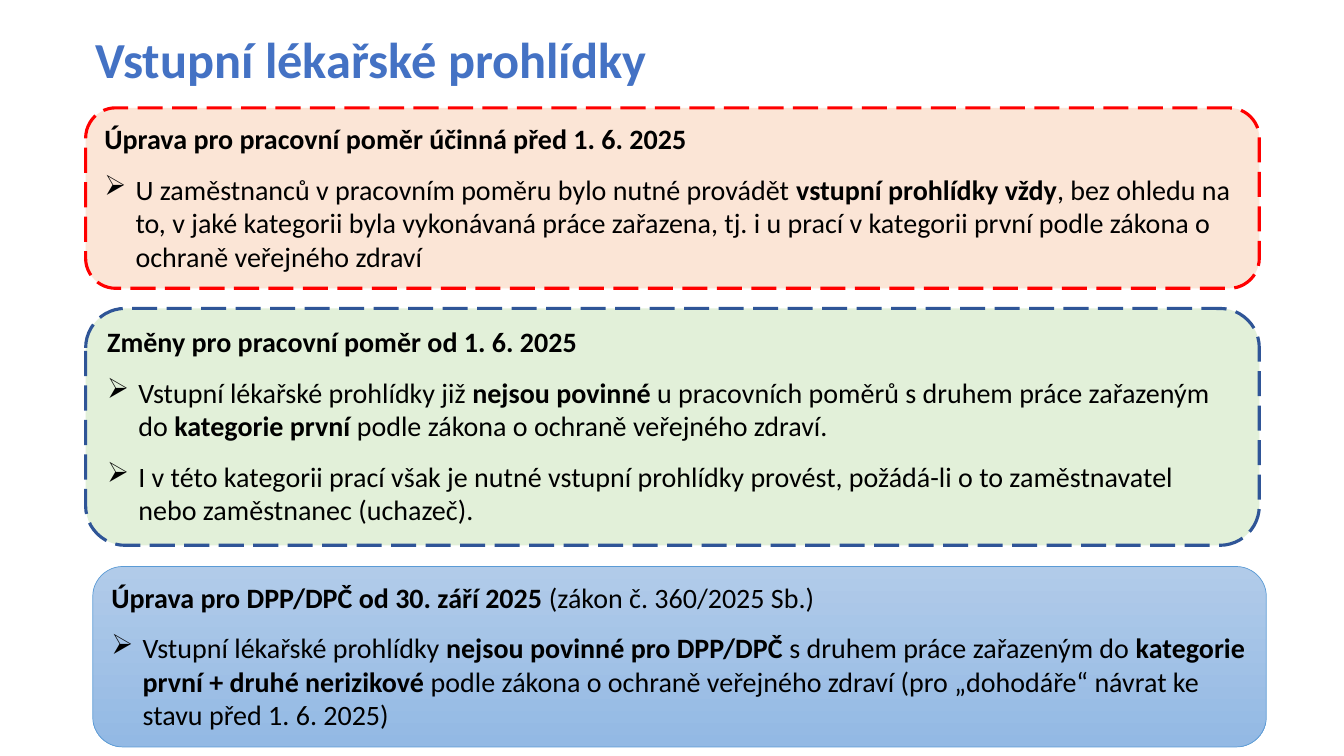
import dataclasses

import pptx
import pptx.dml.color
import pptx.enum.dml
import pptx.enum.shapes
import pptx.enum.text
import pptx.oxml.xmlchemy
import pptx.util
from lxml import etree
from pptx.oxml import ns
from pptx.util import Inches, Pt


@dataclasses.dataclass(frozen=True)
class Theme:
    """Colours, font and type sizes of the slide."""
    font: str = "Calibri"
    title_size: int = 36
    body_size: int = 20
    title: str = "4472C4"
    text: str = "000000"
    before: tuple = (("FBE5D6",), "FF0000")
    change: tuple = (("E2F0D9",), "2F5597")
    agreements: tuple = (("B1CBE9", "93B9E4"), "5B9BD5")


THEME = Theme()


def rgb(value):
    """Turn a hex string into a colour."""
    return pptx.dml.color.RGBColor.from_string(value)


def add_run(p, text, size, color, bold):
    """Add one formatted run to a paragraph."""
    r = p.add_run()
    r.text = text
    r.font.name = THEME.font
    r.font.size = Pt(size)
    r.font.bold = bold
    r.font.color.rgb = rgb(color)


def add_marked_text(p, text):
    """Add runs to a paragraph, bold between asterisks."""
    for i, part in enumerate(text.split("*")):
        if part:
            add_run(p, part, THEME.body_size, THEME.text, i % 2 == 1)


def add_bullet(p):
    """Give a paragraph an arrow bullet with a hanging indent."""
    pPr = p._p.get_or_add_pPr()
    pPr.set("marL", str(Inches(0.31)))
    pPr.set("indent", str(-Inches(0.31)))
    etree.SubElement(pPr, ns.qn("a:buChar")).set("char", "➢")


def add_title(slide, text):
    """Add the slide title."""
    sp = slide.shapes.add_textbox(Inches(0.85), Inches(0.27), Inches(11.11), Inches(0.7))
    tf = sp.text_frame
    tf.word_wrap = True
    tf.vertical_anchor = pptx.enum.text.MSO_ANCHOR.MIDDLE
    p = tf.paragraphs[0]
    p.line_spacing = 0.9
    add_run(p, text, THEME.title_size, THEME.title, True)


def fill_panel(sp, fills):
    """Fill a panel with one colour or a vertical gradient of two."""
    if len(fills) == 1:
        sp.fill.solid()
        sp.fill.fore_color.rgb = rgb(fills[0])
        return
    sp.fill.gradient()
    sp.fill.gradient_angle = 270
    for stop, color in zip(sp.fill.gradient_stops, fills):
        stop.color.rgb = rgb(color)


def add_panel(slide, left, top, height, style, heading, points, dashed=True):
    """Add a rounded panel with a heading and bulleted points."""
    sp = slide.shapes.add_shape(
        pptx.enum.shapes.MSO_SHAPE.ROUNDED_RECTANGLE,
        Inches(left), Inches(top), Inches(11.64), Inches(height))
    sp.shadow.inherit = False
    fills, line = style
    fill_panel(sp, fills)
    sp.line.color.rgb = rgb(line)
    sp.line.width = Pt(2.25 if dashed else 0.5)
    if dashed:
        sp.line.dash_style = pptx.enum.dml.MSO_LINE.LONG_DASH
    tf = sp.text_frame
    tf.word_wrap = True
    tf.auto_size = pptx.enum.text.MSO_AUTO_SIZE.SHAPE_TO_FIT_TEXT
    tf.vertical_anchor = pptx.enum.text.MSO_ANCHOR.TOP
    for i, text in enumerate([heading, *points]):
        p = tf.add_paragraph() if i else tf.paragraphs[0]
        p.alignment = pptx.enum.text.PP_ALIGN.LEFT
        p.space_after = Pt(12)
        if i:
            add_bullet(p)
        add_marked_text(p, text)


def main():
    """Build the slide and save it."""
    prs = pptx.Presentation()
    prs.slide_width, prs.slide_height = Inches(13.33), Inches(7.5)
    slide = prs.slides.add_slide(prs.slide_layouts[6])
    add_title(slide, "Vstupní lékařské prohlídky")
    add_panel(
        slide, 0.85, 1.07, 1.79, THEME.before,
        "*Úprava pro pracovní poměr účinná před 1. 6. 2025*",
        ["U zaměstnanců v pracovním poměru bylo nutné provádět *vstupní prohlídky vždy*, "
         "bez ohledu na to, v jaké kategorii byla vykonávaná práce zařazena, tj. i u prací "
         "v kategorii první podle zákona o ochraně veřejného zdraví"])
    add_panel(
        slide, 0.85, 3.06, 2.35, THEME.change,
        "*Změny pro pracovní poměr od 1. 6. 2025*",
        ["Vstupní lékařské prohlídky již *nejsou povinné *u pracovních poměrů s druhem práce "
         "zařazeným do *kategorie první *podle zákona o ochraně veřejného zdraví.",
         "I v této kategorii prací však je nutné vstupní prohlídky provést, požádá-li o to "
         "zaměstnavatel nebo zaměstnanec (uchazeč)."])
    add_panel(
        slide, 0.92, 5.62, 1.79, THEME.agreements,
        "*Úprava pro DPP/DPČ od 30. září 2025 *(zákon č. 360/2025 Sb.)",
        ["Vstupní lékařské prohlídky *nejsou povinné pro DPP/DPČ *s druhem práce zařazeným do "
         "*kategorie první + druhé nerizikové *podle zákona o ochraně veřejného zdraví "
         "(pro „dohodáře“ návrat ke stavu před 1. 6. 2025)"], dashed=False)
    prs.save("out.pptx")


if __name__ == "__main__":
    main()
